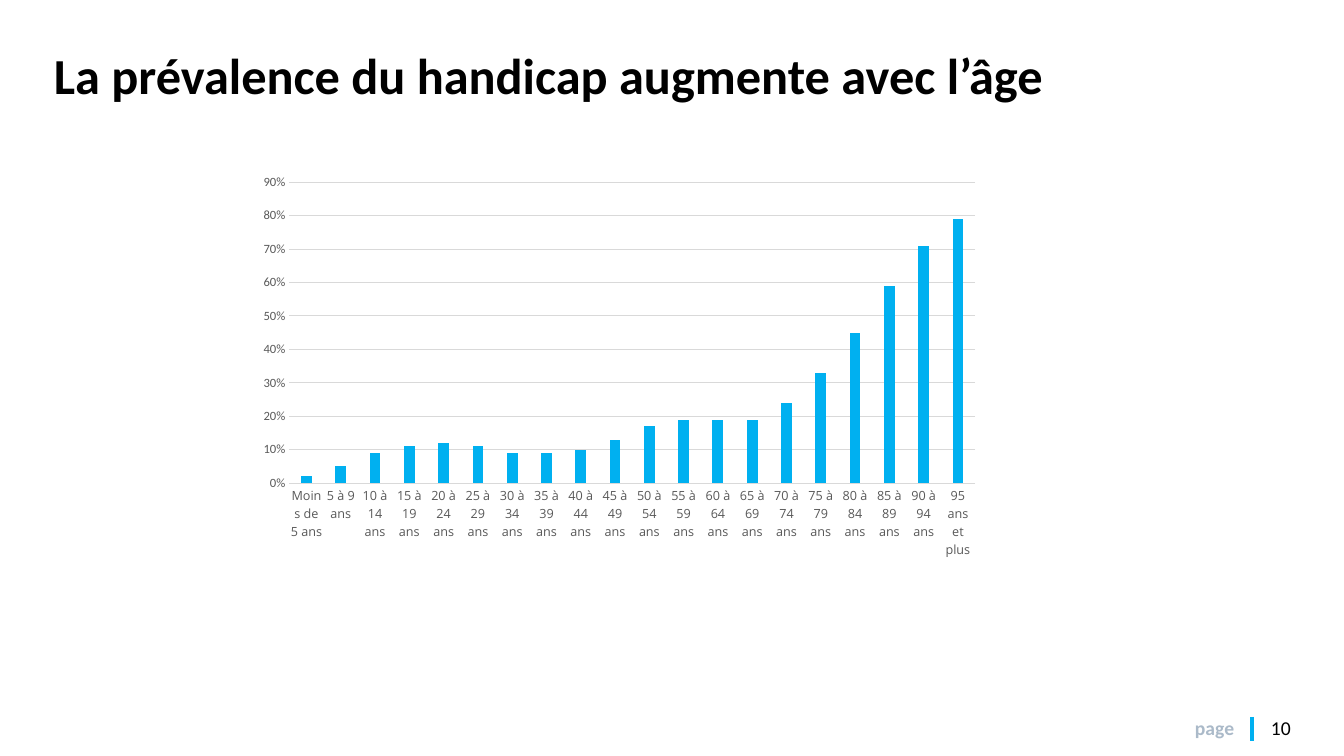
from dataclasses import dataclass

import lxml.etree
import pptx
import pptx.chart.axis
import pptx.chart.data
import pptx.dml.color
import pptx.enum.chart
import pptx.enum.shapes
import pptx.enum.text
import pptx.oxml
import pptx.oxml.ns
import pptx.slide
import pptx.util

SLIDE_WIDTH, SLIDE_HEIGHT = 1344, 756
EMU_PER_PX = 12192000 / SLIDE_WIDTH

BLACK = pptx.dml.color.RGBColor(0x00, 0x00, 0x00)
BLUE = pptx.dml.color.RGBColor(0x00, 0xB0, 0xF0)
PALE_GREY = pptx.dml.color.RGBColor(0xAB, 0xBA, 0xC9)
LABEL_GREY = pptx.dml.color.RGBColor(0x59, 0x59, 0x59)
GRID_GREY = pptx.dml.color.RGBColor(0xD9, 0xD9, 0xD9)

PREVALENCE = {
    "Moins de 5 ans": 2, "5 à 9 ans": 5, "10 à 14 ans": 9, "15 à 19 ans": 11,
    "20 à 24 ans": 12, "25 à 29 ans": 11, "30 à 34 ans": 9, "35 à 39 ans": 9,
    "40 à 44 ans": 10, "45 à 49 ans": 13, "50 à 54 ans": 17, "55 à 59 ans": 19,
    "60 à 64 ans": 19, "65 à 69 ans": 19, "70 à 74 ans": 24, "75 à 79 ans": 33,
    "80 à 84 ans": 45, "85 à 89 ans": 59, "90 à 94 ans": 71, "95 ans et plus": 79,
}
PLOT_AREA = {"x": 0.07, "y": 0.02, "w": 0.9, "h": 0.74}


@dataclass(frozen=True)
class Span:
    text: str
    color: pptx.dml.color.RGBColor
    bold: bool = True


@dataclass(frozen=True)
class Label:
    left: int
    top: int
    width: int
    height: int
    size: int
    spans: tuple[Span, ...]
    line_spacing: float = 1.0
    anchor: pptx.enum.text.MSO_ANCHOR = pptx.enum.text.MSO_ANCHOR.TOP
    tab_stop: int = 0


TITLE = Label(
    54, 17, 1233, 123, 36,
    (Span("La prévalence du handicap augmente avec l’âge", BLACK),),
    line_spacing=0.9, anchor=pptx.enum.text.MSO_ANCHOR.MIDDLE,
)
PAGE_NUMBER = Label(
    1195, 716, 140, 24, 14,
    (Span("page\t", PALE_GREY), Span("10", BLACK, bold=False)),
    tab_stop=76,
)


def px(length: int) -> pptx.util.Emu:
    return pptx.util.Emu(round(length * EMU_PER_PX))


def add_label(slide: pptx.slide.Slide, label: Label) -> None:
    box = slide.shapes.add_textbox(
        px(label.left), px(label.top), px(label.width), px(label.height))
    frame = box.text_frame
    frame.word_wrap = True
    frame.vertical_anchor = label.anchor
    frame.margin_left = frame.margin_top = frame.margin_right = frame.margin_bottom = 0
    para = frame.paragraphs[0]
    para.line_spacing = label.line_spacing
    para.font.name = "Calibri"
    para.font.size = pptx.util.Pt(label.size)
    if label.tab_stop:
        properties = para._p.get_or_add_pPr()
        tabs = pptx.oxml.parse_xml(
            f'<a:tabLst {pptx.oxml.ns.nsdecls("a")}>'
            f'<a:tab pos="{px(label.tab_stop)}" algn="l"/></a:tabLst>')
        properties.insert_element_before(tabs, "a:defRPr", "a:extLst")
    for span in label.spans:
        run = para.add_run()
        run.text = span.text
        run.font.bold = span.bold
        run.font.color.rgb = span.color


def add_page_rule(slide: pptx.slide.Slide) -> None:
    rule = slide.shapes.add_connector(
        pptx.enum.shapes.MSO_CONNECTOR.STRAIGHT, px(1252), px(717), px(1252), px(741))
    rule.line.color.rgb = BLUE
    rule.line.width = pptx.util.Pt(2.25)
    lxml.etree.SubElement(rule._element.spPr, pptx.oxml.ns.qn("a:effectLst"))


def style_axis(axis: pptx.chart.axis._BaseAxis, font_name: str) -> None:
    axis.major_tick_mark = pptx.enum.chart.XL_TICK_MARK.NONE
    axis.minor_tick_mark = pptx.enum.chart.XL_TICK_MARK.NONE
    font = axis.tick_labels.font
    font.name = font_name
    font.size = pptx.util.Pt(9)
    font.color.rgb = LABEL_GREY


def add_prevalence_chart(slide: pptx.slide.Slide) -> None:
    data = pptx.chart.data.CategoryChartData(number_format=r"0\%")
    data.categories = list(PREVALENCE)
    data.add_series("Series 1", list(PREVALENCE.values()))
    chart = slide.shapes.add_chart(
        pptx.enum.chart.XL_CHART_TYPE.COLUMN_CLUSTERED,
        px(236), px(174), px(762), px(407), data).chart
    chart.has_legend = False
    chart.has_title = False
    chart.font.name = "Calibri"
    chart.font.size = pptx.util.Pt(10)
    chart.font.color.rgb = BLACK

    plot = chart.plots[0]
    plot.gap_width = 219
    plot.overlap = -27
    plot.vary_by_categories = False
    fill = plot.series[0].format.fill
    fill.solid()
    fill.fore_color.rgb = BLUE

    ages, rates = chart.category_axis, chart.value_axis
    style_axis(ages, "Open Sans")
    style_axis(rates, "Calibri")
    rates.minimum_scale, rates.maximum_scale, rates.major_unit = 0, 90, 10
    rates.tick_labels.number_format = r"0\%"
    rates.tick_labels.number_format_is_linked = False
    rates.format.line.fill.background()
    for line in (ages.format.line, rates.major_gridlines.format.line):
        line.color.rgb = GRID_GREY
        line.width = pptx.util.Pt(0.75)

    place_plot_area(chart._chartSpace.chart.plotArea)


def place_plot_area(plot_area: lxml.etree.ElementBase) -> None:
    """Fix the inner plot area as fractions of the chart frame."""
    settings = {"layoutTarget": "inner", "xMode": "edge", "yMode": "edge", **PLOT_AREA}
    children = "".join(f'<c:{tag} val="{value}"/>' for tag, value in settings.items())
    layout = pptx.oxml.parse_xml(
        f'<c:layout {pptx.oxml.ns.nsdecls("c")}>'
        f"<c:manualLayout>{children}</c:manualLayout></c:layout>")
    for old_layout in plot_area.findall(pptx.oxml.ns.qn("c:layout")):
        plot_area.remove(old_layout)
    plot_area.insert(0, layout)


def main() -> None:
    deck = pptx.Presentation()
    deck.slide_width, deck.slide_height = px(SLIDE_WIDTH), px(SLIDE_HEIGHT)
    slide = deck.slides.add_slide(deck.slide_layouts[6])
    add_label(slide, PAGE_NUMBER)
    add_page_rule(slide)
    add_label(slide, TITLE)
    add_prevalence_chart(slide)
    deck.save("out.pptx")


if __name__ == "__main__":
    main()
